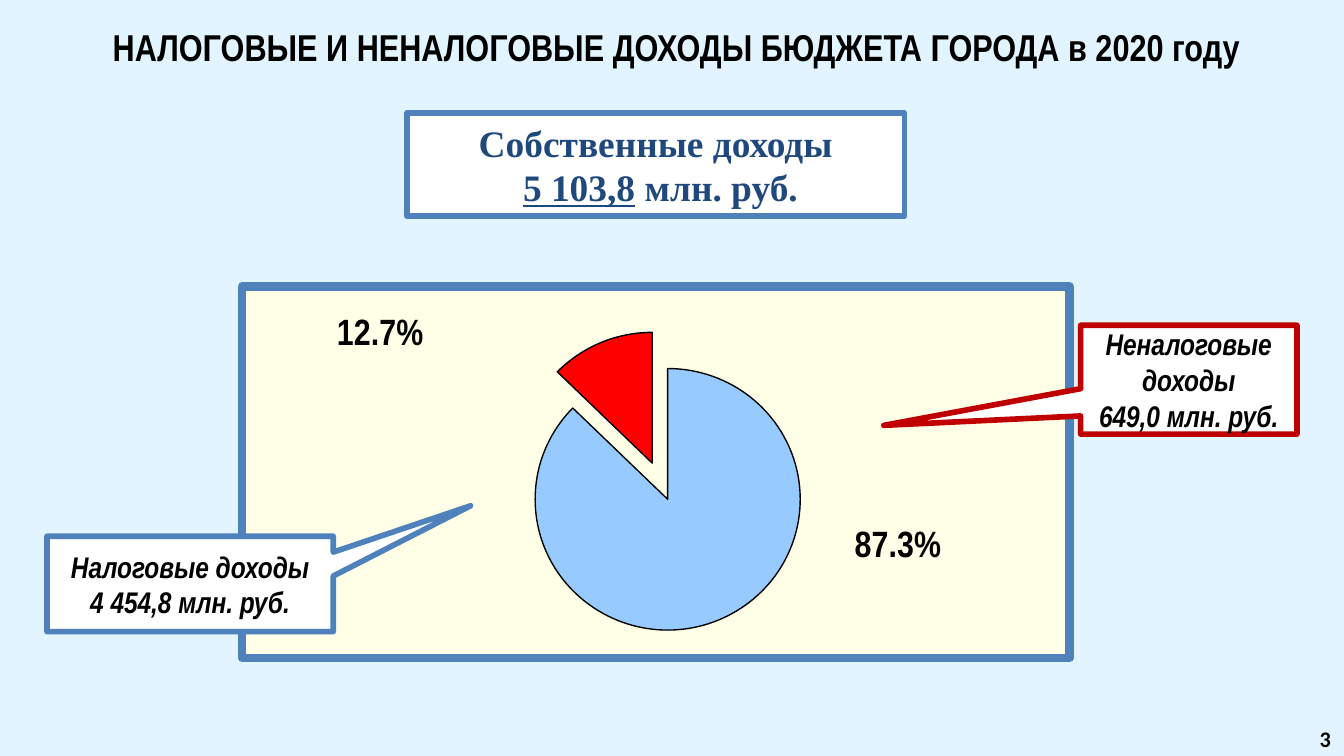
from lxml import etree
from pptx import Presentation
from pptx import util as u
from pptx.chart.data import CategoryChartData
from pptx.dml.color import RGBColor
from pptx.enum import chart as ch, shapes, text
from pptx.oxml import parse_xml
from pptx.oxml.ns import nsdecls, qn

SKY = RGBColor(0xE1, 0xF4, 0xFF)
WHITE = RGBColor(255, 255, 255)
BLACK = RGBColor(0, 0, 0)
BLUE = RGBColor(0x4F, 0x81, 0xBD)
NAVY = RGBColor(0x1F, 0x49, 0x7D)
CRIMSON = RGBColor(0xC0, 0, 0)
CREAM = RGBColor(0xFF, 0xFF, 0xE7)
PALE = RGBColor(0x97, 0xCB, 0xFF)
RED = RGBColor(255, 0, 0)
NARROW, SERIF = "Arial Narrow", "Times New Roman"

TITLE = "НАЛОГОВЫЕ И НЕНАЛОГОВЫЕ ДОХОДЫ БЮДЖЕТА ГОРОДА в 2020 году"
TOTAL = [[("Собственные доходы", False)],
         [(" ", False), ("5 103,8", True), (" млн. руб.", False)]]
NOTES = [
    (("Налоговые доходы", "4 454,8 млн. руб."),
     (0.35, 3.99, 2.13, 0.71), (0.98, -0.82), BLUE),
    (("Неналоговые доходы", "649,0 млн. руб."),
     (8.04, 2.42, 1.61, 0.81), (-1.41, 0.42), CRIMSON),
]
SLICES = [("1", 87.3, PALE, (0.16, -0.26)), ("2", 12.7, RED, (-0.21, 0.05))]
PLOT = (0.01, 0.12, 0.99, 0.81)


def place(box):
    """Turn a box in inches into lengths."""
    return [u.Inches(n) for n in box]


def write(frame, rows, size, font, color=BLACK, italic=None,
          align=text.PP_ALIGN.CENTER):
    """Write rows of (words, underline) runs into a text frame."""
    frame.word_wrap = True
    frame.auto_size = text.MSO_AUTO_SIZE.NONE
    for i, row in enumerate(rows):
        para = frame.add_paragraph() if i else frame.paragraphs[0]
        para.alignment = align
        for words, under in row:
            run = para.add_run()
            run.text = words
            face = run.font
            face.size, face.name, face.bold = u.Pt(size), font, True
            face.italic, face.underline = italic, under
            face.color.rgb = color


def draw(slide, kind, box, color):
    """Add a white outlined shape."""
    item = slide.shapes.add_shape(kind, *place(box))
    item.shadow.inherit = False
    item.fill.solid()
    item.fill.fore_color.rgb = WHITE
    item.line.color.rgb = color
    item.line.width = u.Pt(3)
    return item


def layout(sizes, inner=False):
    """Make a manual chart layout."""
    tags = "".join(f'<c:{k} val="{v}"/>' for k, v in zip("xywh", sizes))
    if inner:
        tags = ('<c:layoutTarget val="inner"/><c:xMode val="edge"/>'
                '<c:yMode val="edge"/>' + tags)
    return parse_xml(f'<c:layout {nsdecls("c")}><c:manualLayout>{tags}'
                     '</c:manualLayout></c:layout>')


def label(index, shift):
    """Make a shifted percent label."""
    show = "".join(f'<c:show{k} val="{int(k == "Percent")}"/>' for k in
                   ("LegendKey", "Val", "CatName", "SerName", "Percent", "BubbleSize"))
    tag = parse_xml(f'<c:dLbl {nsdecls("c")}><c:idx val="{index}"/>'
                    f'<c:dLblPos val="outEnd"/>{show}</c:dLbl>')
    tag.insert(1, layout(shift))
    return tag


def add_pie(slide):
    """Add the framed pie chart."""
    data = CategoryChartData()
    data.categories = [s[0] for s in SLICES]
    data.add_series("Series 1", [s[1] for s in SLICES])
    pie = slide.shapes.add_chart(ch.XL_CHART_TYPE.PIE,
                                 *place((1.77, 2.1, 6.22, 2.83)), data).chart
    pie.has_legend = pie.has_title = False
    pie.font.name, pie.font.size = NARROW, u.Pt(18)
    pie.font.color.rgb = BLACK
    plot = pie.plots[0]
    plot.vary_by_categories = True
    ser = plot.series[0]
    for i, (_, _, color, _) in enumerate(SLICES):
        form = ser.points[i].format
        form.fill.solid()
        form.fill.fore_color.rgb = color
        form.line.color.rgb = BLACK
        form.line.width = u.Pt(0.75)
    ser._element.find(qn("c:dPt")).addprevious(
        parse_xml(f'<c:explosion {nsdecls("c")} val="15"/>'))
    labels = ser.data_labels
    labels.show_percentage, labels.show_value = True, False
    labels.number_format, labels.number_format_is_linked = "0.0%", False
    labels.position = ch.XL_LABEL_POSITION.OUTSIDE_END
    labels.font.size, labels.font.bold = u.Pt(20), True
    labels.font.name = NARROW
    labels.font.color.rgb = BLACK
    tags = labels._element
    for i, part in enumerate(SLICES):
        tags.insert(i, label(i, part[3]))
    lead = tags.find(qn("c:showLeaderLines"))
    if lead is None:
        lead = etree.SubElement(tags, qn("c:showLeaderLines"))
    lead.set("val", "0")
    area = pie._chartSpace.find(qn("c:chart"))
    inside = area.find(qn("c:plotArea"))
    for old in inside.findall(qn("c:layout")):
        inside.remove(old)
    inside.insert(0, layout(PLOT, True))
    area.addnext(parse_xml(
        f'<c:spPr {nsdecls("c", "a")}><a:solidFill><a:srgbClr val="{CREAM}"/>'
        f'</a:solidFill><a:ln w="{u.Pt(4.5)}"><a:solidFill><a:srgbClr val="{BLUE}"/>'
        '</a:solidFill><a:round/></a:ln></c:spPr>'))


def main():
    """Build the slide."""
    deck = Presentation()
    deck.slide_width, deck.slide_height = place((10, 10 * 9 / 16))
    slide = deck.slides.add_slide(deck.slide_layouts[5])
    slide.background.fill.solid()
    slide.background.fill.fore_color.rgb = SKY

    total = draw(slide, shapes.MSO_SHAPE.RECTANGLE, (3.03, 0.84, 3.7, 0.77), BLUE)
    write(total.text_frame, TOTAL, 20, SERIF, NAVY)

    head = slide.shapes.title
    head.left, head.top, head.width, head.height = place((0.2, 0.1, 9.67, 0.43))
    write(head.text_frame, [[(TITLE, False)]], 20, NARROW)
    head.text_frame.vertical_anchor = text.MSO_ANCHOR.MIDDLE
    head.text_frame.paragraphs[0].line_spacing = 1.2

    add_pie(slide)
    page = slide.shapes.add_textbox(*place((9.44, 5.35, 0.56, 0.26)))
    write(page.text_frame, [[("3", False)]], 11.9, "Calibri",
          align=text.PP_ALIGN.RIGHT)

    for lines, box, tip, color in NOTES:
        note = draw(slide, shapes.MSO_SHAPE.RECTANGULAR_CALLOUT, box, color)
        note.adjustments[0], note.adjustments[1] = tip
        etree.SubElement(note.line._get_or_add_ln(), qn("a:round"))
        write(note.text_frame, [[(t, False)] for t in lines], 16, NARROW, italic=True)
        note.text_frame.vertical_anchor = text.MSO_ANCHOR.MIDDLE
    deck.save("out.pptx")


if __name__ == "__main__":
    main()
